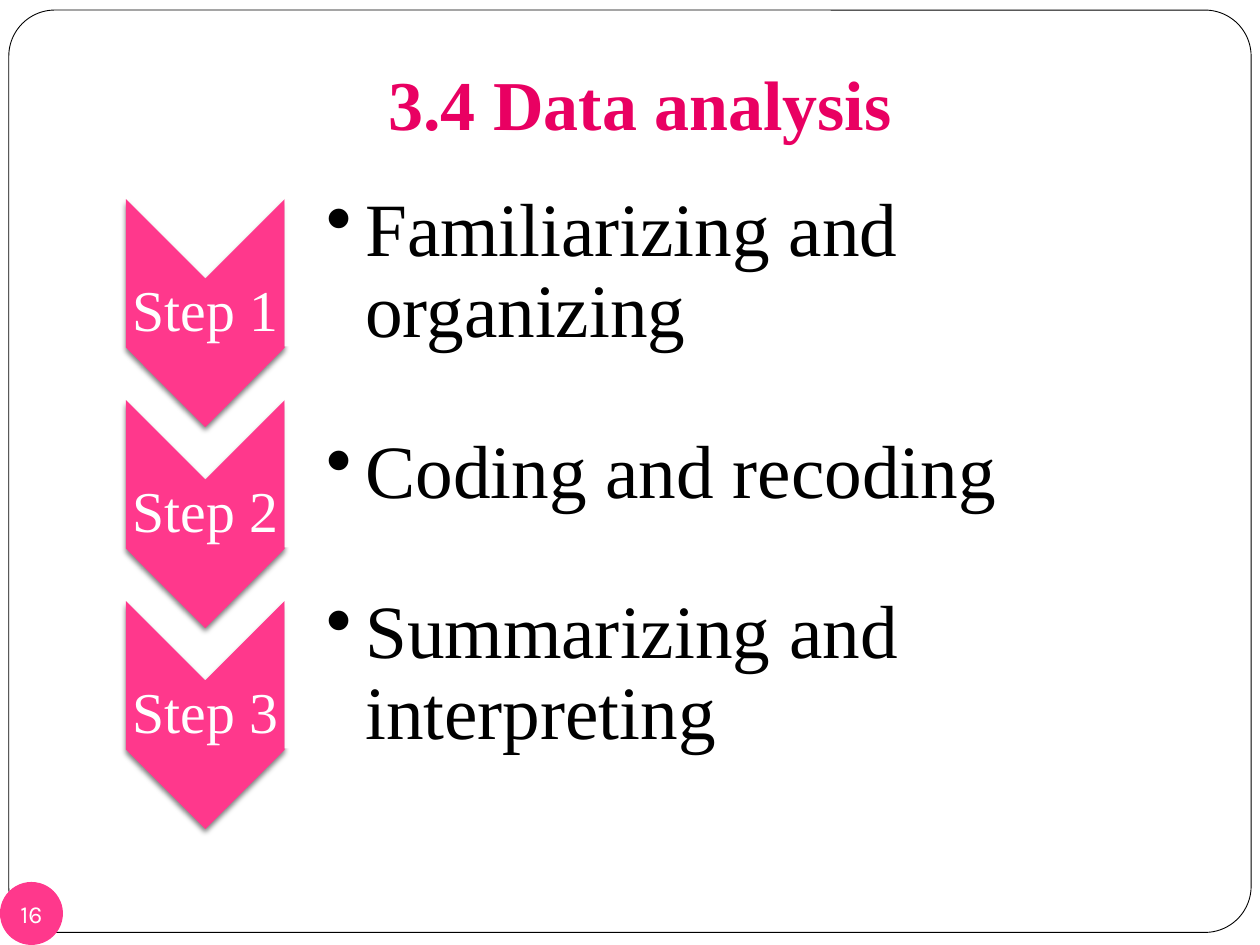
import math
from lxml import etree
from pptx import Presentation
from pptx.dml.color import RGBColor
from pptx.enum import shapes, text
from pptx.oxml import ns
from pptx.util import Inches, Pt

TITLE = "3.4 Data analysis"
PAGE_NUMBER = "16"
STEPS = [
    ("Step 1", "Familiarizing and organizing"),
    ("Step 2", "Coding and recoding"),
    ("Step 3", "Summarizing and interpreting"),
]

PINK = RGBColor(0xFF, 0x38, 0x8C)
CRIMSON = RGBColor(0xE9, 0x00, 0x62)
WHITE = RGBColor(0xFF, 0xFF, 0xFF)
BLACK = RGBColor(0, 0, 0)
SERIF = "Times New Roman"

LEFT, MIDDLE, RIGHT = 1, 2.26, 9.5
FIRST_TOP, LAST_TOP = 1.58, 4.77
CHEVRON_HEIGHT, NOTCH = 1.81, 0.63
PANEL_HEIGHT, RADIUS = 1.17, 0.2


def add_xml(parent, tag, **attributes):
    return etree.SubElement(parent, ns.qn(tag), attributes)


def write(box, words, size, color, font=SERIF, bold=False, insets=(0, 0, 0, 0),
          align=text.PP_ALIGN.CENTER, anchor=text.MSO_ANCHOR.MIDDLE,
          spacing=None, wrap=True, bullet=False):
    frame = box.text_frame
    frame.word_wrap = wrap
    frame.vertical_anchor = anchor
    (frame.margin_left, frame.margin_top,
     frame.margin_right, frame.margin_bottom) = map(Inches, insets)
    para = frame.paragraphs[0]
    para.alignment = align
    para.line_spacing = spacing
    if bullet:
        para.level = 1
        props = para._p.get_or_add_pPr()
        props.set("marL", str(Inches(0.31)))
        props.set("indent", str(Inches(-0.31)))
        add_xml(props, "a:buChar", char="•")
    span = para.add_run()
    span.text = words
    span.font.size = Pt(size)
    span.font.name = font
    span.font.bold = bold
    span.font.color.rgb = color


def paint(shape, color, line=None):
    shape.shadow.inherit = False
    shape.fill.solid()
    shape.fill.fore_color.rgb = color
    if line is None:
        shape.line.fill.background()
    else:
        shape.line.color.rgb = line
        shape.line.width = Pt(0.5)


def add_outline(page, points, color):
    corners = [(Inches(x), Inches(y)) for x, y in points]
    builder = page.shapes.build_freeform(*corners[0])
    builder.add_line_segments(corners[1:], close=True)
    shape = builder.convert_to_shape()
    paint(shape, color)
    return shape


def add_chevron(page, top, label):
    center, bottom = (LEFT + MIDDLE) / 2, top + CHEVRON_HEIGHT
    chevron = add_outline(page, [
        (MIDDLE, top), (MIDDLE, bottom - NOTCH), (center, bottom),
        (LEFT, bottom - NOTCH), (LEFT, top), (center, top + NOTCH)], PINK)
    effects = chevron._element.spPr.find(ns.qn("a:effectLst"))
    shadow = add_xml(effects, "a:outerShdw", blurRad=str(Pt(3)), dist=str(Pt(2)),
                     dir="5400000", rotWithShape="0")
    add_xml(add_xml(shadow, "a:srgbClr", val=str(BLACK)), "a:alpha", val="50000")
    write(chevron, label, 33, WHITE, insets=(0.02, 0.66, 0.02, 0.66), spacing=0.9)


def add_panel(page, top, words):
    bottom = top + PANEL_HEIGHT
    points = [(MIDDLE, bottom), (MIDDLE, top)]
    for center_y, start in ((top + RADIUS, -90), (bottom - RADIUS, 0)):
        for turn in range(0, 91, 15):
            angle = math.radians(start + turn)
            points.append((RIGHT - RADIUS + RADIUS * math.cos(angle),
                           center_y + RADIUS * math.sin(angle)))
    panel = add_outline(page, points, WHITE)
    color = panel._element.spPr.find(ns.qn("a:solidFill"))[0]
    add_xml(color, "a:alpha", val="90000")
    write(panel, words, 43, BLACK, insets=(0.33, 0.09, 0.09, 0.09),
          align=text.PP_ALIGN.LEFT, spacing=0.9, bullet=True)


def main():
    deck = Presentation()
    deck.slide_width, deck.slide_height = Inches(10), Inches(7.5)
    page = deck.slides.add_slide(deck.slide_layouts[6])

    border = page.shapes.add_shape(shapes.MSO_SHAPE.ROUNDED_RECTANGLE,
                                   *map(Inches, (0.07, 0.08, 9.86, 7.32)))
    border.adjustments[0] = 0.05
    paint(border, WHITE, line=BLACK)

    title = page.shapes.add_textbox(*map(Inches, (0.83, 0, 8.5, 1.25)))
    write(title, TITLE, 40, CRIMSON, bold=True, insets=(0.1, 0.05, 0.1, 0.1),
          anchor=text.MSO_ANCHOR.BOTTOM)

    badge = page.shapes.add_shape(shapes.MSO_SHAPE.OVAL,
                                  *map(Inches, (0, 7, 0.5, 0.5)))
    paint(badge, PINK)
    write(badge, PAGE_NUMBER, 14, WHITE, font="Karla", wrap=False)

    pitch = (LAST_TOP - FIRST_TOP) / (len(STEPS) - 1)
    for index, (label, words) in enumerate(STEPS):
        top = FIRST_TOP + index * pitch
        add_chevron(page, top, label)
        add_panel(page, top, words)

    deck.save("out.pptx")


if __name__ == "__main__":
    main()
